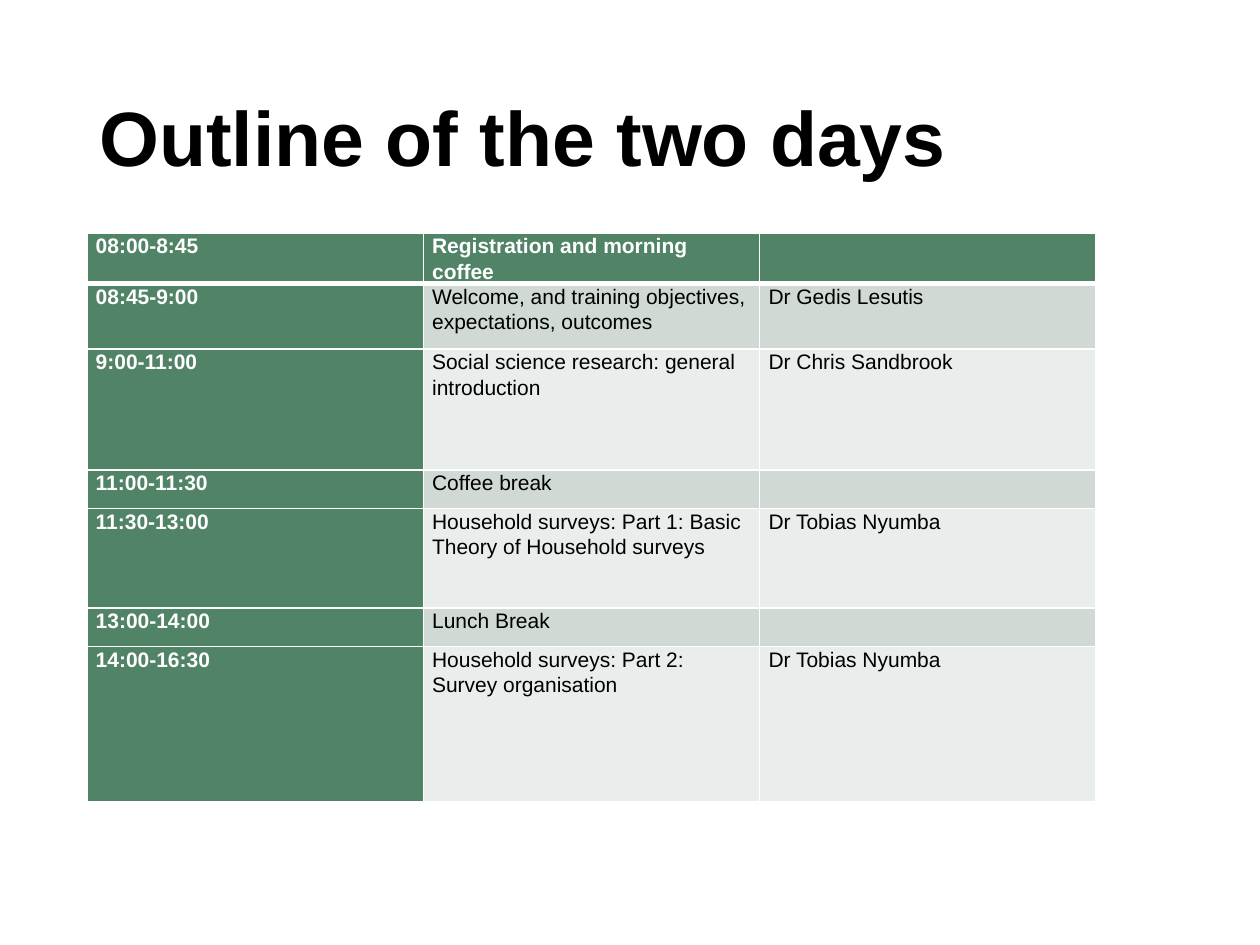
from pptx import Presentation
from pptx.dml.color import RGBColor
from pptx.enum import text
from pptx.oxml import parse_xml
from pptx.oxml.ns import nsdecls
from pptx.util import Inches, Pt

GREEN = "518367"
WHITE = "FFFFFF"
BLACK = "000000"
BANDS = ["E9EDEB", "D0D9D3"]
ROW_HEIGHTS = [0.39, 0.52, 0.96, 0.2, 0.79, 0.2, 1.23]
COLUMN_WIDTH = 2.67
SCHEDULE = [
    ("08:00-8:45", "Registration and morning coffee", ""),
    ("08:45-9:00", "Welcome, and training objectives, expectations, outcomes",
     "Dr Gedis Lesutis"),
    ("9:00-11:00", "Social science research: general introduction",
     "Dr Chris Sandbrook"),
    ("11:00-11:30", "Coffee break", ""),
    ("11:30-13:00",
     "Household surveys: Part 1: Basic Theory of Household surveys",
     "Dr Tobias Nyumba"),
    ("13:00-14:00", "Lunch Break", ""),
    ("14:00-16:30", "Household surveys: Part 2: Survey organisation",
     "Dr Tobias Nyumba"),
]


def color(value):
    return RGBColor.from_string(value)


def add_span(para, wording, size, ink, bold):
    span = para.add_run()
    span.text = wording
    span.font.name = "Arial"
    span.font.size = Pt(size)
    span.font.bold = bold
    span.font.color.rgb = color(ink)


def add_title(page, wording):
    title = page.shapes.title
    title.left, title.top = Inches(0.69), Inches(0.4)
    title.width, title.height = Inches(8.62), Inches(1.45)
    frame = title.text_frame
    frame.word_wrap = True
    frame.auto_size = text.MSO_AUTO_SIZE.NONE
    frame.vertical_anchor = text.MSO_ANCHOR.MIDDLE
    para = frame.paragraphs[0]
    para.alignment = text.PP_ALIGN.LEFT
    para.line_spacing = 0.9
    add_span(para, wording, 44, BLACK, True)


def set_borders(cell, widths):
    properties = cell._tc.get_or_add_tcPr()
    for side, width in widths.items():
        properties.append(parse_xml(
            f'<a:ln{side} {nsdecls("a")} w="{Pt(width)}"><a:solidFill>'
            f'<a:srgbClr val="{WHITE}"/></a:solidFill></a:ln{side}>'))


def fill_cell(cell, wording, row, column):
    heading = row == 0 or column == 0
    cell.margin_left = cell.margin_right = Inches(0.07)
    cell.margin_top = cell.margin_bottom = 0
    set_borders(cell, {"L": 1, "R": 1, "T": 3 if row == 1 else 1,
                       "B": 3 if row == 0 else 1})
    cell.fill.solid()
    cell.fill.fore_color.rgb = color(GREEN if heading else BANDS[row % 2])
    para = cell.text_frame.paragraphs[0]
    para.line_spacing = Pt(14.4)
    if wording:
        add_span(para, wording, 12, WHITE if heading else BLACK, heading)


def add_schedule(page):
    columns = len(SCHEDULE[0])
    table = page.shapes.add_table(
        len(SCHEDULE), columns, Inches(0.69), Inches(1.85),
        Inches(columns * COLUMN_WIDTH), Inches(sum(ROW_HEIGHTS))).table
    for column in table.columns:
        column.width = Inches(COLUMN_WIDTH)
    for row, entry in enumerate(SCHEDULE):
        table.rows[row].height = Inches(ROW_HEIGHTS[row])
        for column, wording in enumerate(entry):
            fill_cell(table.cell(row, column), wording, row, column)


def main():
    deck = Presentation()
    deck.slide_width, deck.slide_height = Inches(10), Inches(7.5)
    page = deck.slides.add_slide(deck.slide_layouts[5])
    add_title(page, "Outline of the two days")
    add_schedule(page)
    deck.save("out.pptx")


if __name__ == "__main__":
    main()
